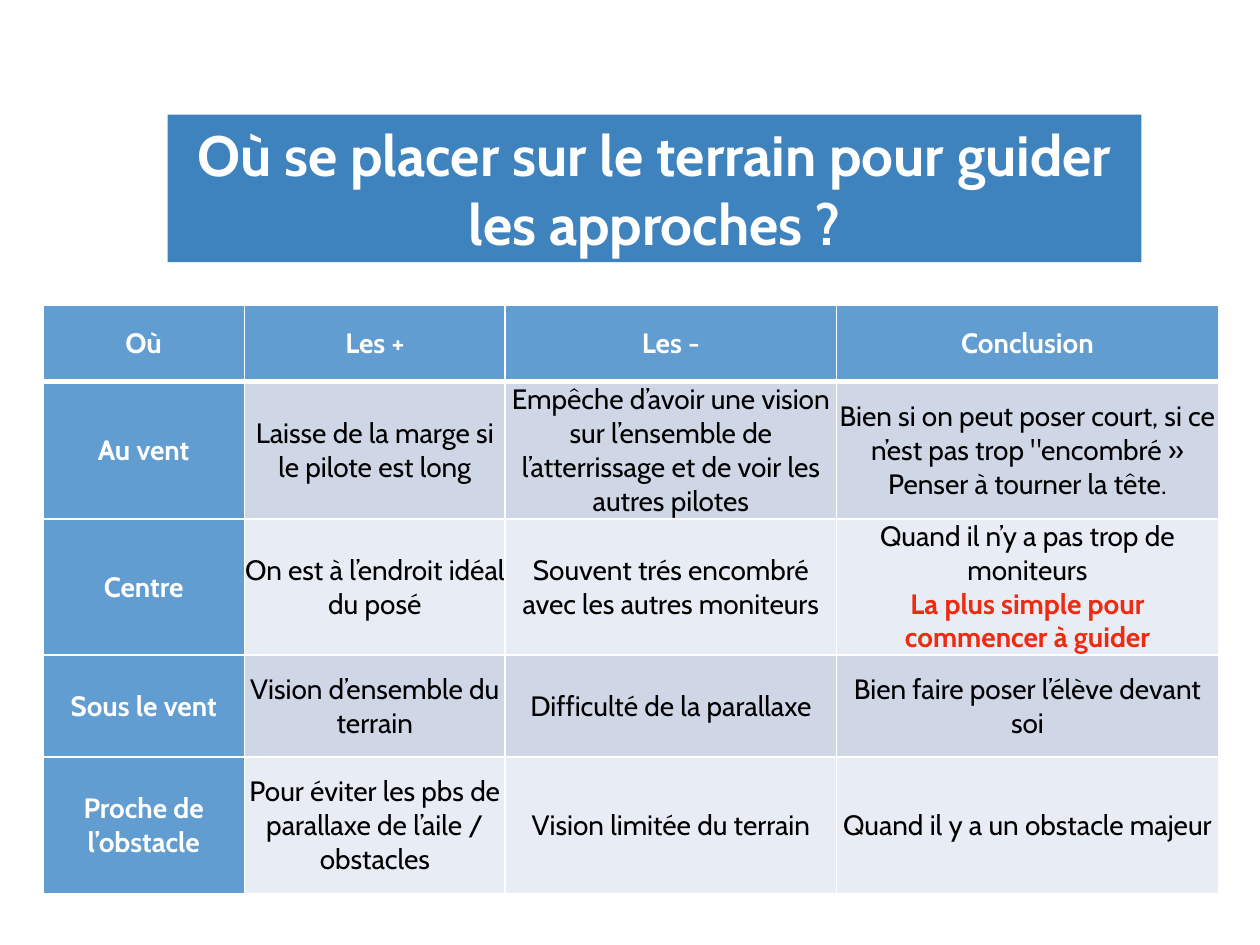
from lxml.etree import SubElement
from pptx import Presentation
from pptx.dml.color import RGBColor
from pptx.enum.text import MSO_ANCHOR as Anchor, MSO_AUTO_SIZE as AutoSize, PP_ALIGN as Align
from pptx.oxml.ns import qn
from pptx.util import Inches, Pt

WHITE = RGBColor(0xFF, 0xFF, 0xFF)
BLACK = RGBColor(0x00, 0x00, 0x00)
RED = RGBColor(0xEE, 0x2A, 0x10)
BANNER = RGBColor(0x3F, 0x83, 0xBE)
HEADING = RGBColor(0x62, 0x9D, 0xD1)
BANDS = (RGBColor(0xE8, 0xEC, 0xF4), RGBColor(0xCF, 0xD7, 0xE7))

TITLE = "Où se placer sur le terrain pour guider les approches ?"
ADVICE = "La plus simple pour commencer à guider"
COLUMN_WIDTHS = (1.6, 2.07, 2.63, 3.03)
ROW_HEIGHTS = (0.61, 1.09, 1.08, 0.81, 1.08)
POSITIONS = (
    ("Où", "Les +", "Les -", "Conclusion"),
    ("Au vent", "Laisse de la marge si le pilote est long",
     "Empêche d’avoir une vision sur l’ensemble de l’atterrissage et de voir les autres pilotes",
     "Bien si on peut poser court, si ce n’est pas trop \"encombré »\vPenser à tourner la tête."),
    ("Centre", "On est à l’endroit idéal du posé",
     "Souvent trés encombré avec les autres moniteurs",
     "Quand il n’y a pas trop de moniteurs\n" + ADVICE),
    ("Sous le vent", "Vision d’ensemble du terrain",
     "Difficulté de la parallaxe", "Bien faire poser l’élève devant soi"),
    ("Proche de l’obstacle", "Pour éviter les pbs de parallaxe de l’aile / obstacles",
     "Vision limitée du terrain", "Quand il y a un obstacle majeur"),
)


class SlideBuilder:
    """Adds styled elements to the current slide."""

    font_name = "Cabin"

    def __init__(self, deck):
        self.page = deck.slides.add_slide(deck.slide_layouts[5])

    def style(self, para, size, color, bold):
        para.alignment = Align.CENTER
        para.font.name = self.font_name
        para.font.size = Pt(size)
        para.font.color.rgb = color
        para.font.bold = bold

    def title(self, text, left, top, width, height):
        box = self.page.shapes.title
        box.left, box.top = Inches(left), Inches(top)
        box.width, box.height = Inches(width), Inches(height)
        box.fill.solid()
        box.fill.fore_color.rgb = BANNER
        frame = box.text_frame
        frame.text = text
        frame.word_wrap = True
        frame.auto_size = AutoSize.NONE
        frame.vertical_anchor = Anchor.MIDDLE
        self.style(frame.paragraphs[0], 32.4, WHITE, True)

    def borders(self, cell, widths):
        properties = cell._tc.get_or_add_tcPr()
        for side, width in zip("LRTB", widths):
            line = SubElement(properties, qn(f"a:ln{side}"), w=str(Pt(width)))
            fill = SubElement(line, qn("a:solidFill"))
            SubElement(fill, qn("a:srgbClr"), val=str(WHITE))

    def cell(self, cell, text, row, column):
        is_heading = row == 0 or column == 0
        cell.margin_left = cell.margin_right = cell.margin_top = cell.margin_bottom = 0
        cell.vertical_anchor = Anchor.MIDDLE
        self.borders(cell, (1, 1, 3 if row == 1 else 1, 3 if row == 0 else 1))
        cell.fill.solid()
        cell.fill.fore_color.rgb = HEADING if is_heading else BANDS[row % 2]
        cell.text = text
        for para in cell.text_frame.paragraphs:
            is_advice = para.text == ADVICE
            color = WHITE if is_heading else RED if is_advice else BLACK
            self.style(para, 16, color, is_heading or is_advice)

    def table(self, rows, left, top, widths, heights):
        frame = self.page.shapes.add_table(
            len(heights), len(widths), Inches(left), Inches(top),
            Inches(sum(widths)), Inches(sum(heights)))
        grid = frame.table
        grid.first_col = True
        for column, width in zip(grid.columns, widths):
            column.width = Inches(width)
        for row, height in zip(grid.rows, heights):
            row.height = Inches(height)
        for row, texts in enumerate(rows):
            for column, text in enumerate(texts):
                self.cell(grid.cell(row, column), text, row, column)


def main():
    deck = Presentation()
    deck.slide_width, deck.slide_height = Inches(10), Inches(7.5)
    builder = SlideBuilder(deck)
    builder.title(TITLE, 1.33, 0.91, 7.73, 1.17)
    builder.table(POSITIONS, 0.34, 2.42, COLUMN_WIDTHS, ROW_HEIGHTS)
    deck.save("out.pptx")


if __name__ == "__main__":
    main()
